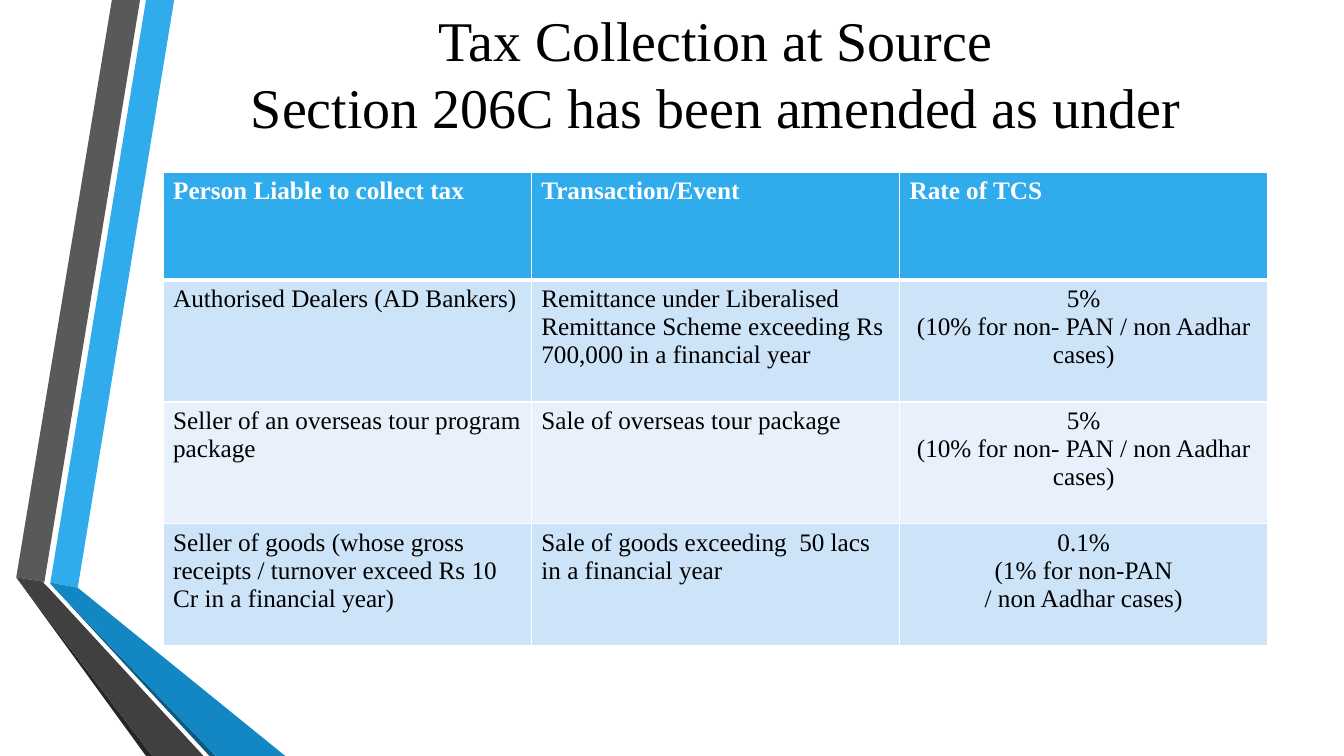
from dataclasses import dataclass

from lxml.etree import SubElement
from pptx import Presentation
from pptx.dml.color import RGBColor
from pptx.enum.text import MSO_ANCHOR, MSO_AUTO_SIZE, PP_ALIGN
from pptx.oxml.ns import qn
from pptx.util import Cm, Pt


@dataclass(frozen=True)
class Theme:
    font: str = "Times New Roman"
    title_size: int = 40
    table_size: int = 18
    black: str = "000000"
    white: str = "FFFFFF"
    blue: str = "30ACEC"
    mid_blue: str = "1287C3"
    deep_blue: str = "0C5A82"
    grey: str = "595959"
    dark_grey: str = "404040"
    near_black: str = "262626"
    bands: tuple = ("CDE3F8", "E8F1FB")


THEME = Theme()

# Ribbon outlines in centimetres, from back to front
RIBBONS = [
    (THEME.blue, [(1.27, 14.68), (1.96, 14.81), (4.39, 0), (3.68, 0)]),
    (THEME.grey, [(3.53, 0), (2.82, 0), (0.41, 14.55), (1.12, 14.66)]),
    (THEME.near_black, [(0.41, 14.55), (3.68, 19.05), (3.84, 19.05)]),
    (THEME.deep_blue, [(1.27, 14.71), (5.28, 19.05), (5.44, 19.05)]),
    (THEME.mid_blue, [(1.27, 14.71), (5.44, 19.05), (7.19, 19.05),
                      (1.96, 14.81), (1.27, 14.68)]),
    (THEME.dark_grey, [(5.13, 19.05), (1.22, 14.81), (1.09, 14.68),
                       (1.12, 14.66), (0.41, 14.55), (3.84, 19.05)]),
]

TITLE = "Tax Collection at Source\vSection 206C has been amended as under"
HEADINGS = ["Person Liable to collect tax", "Transaction/Event", "Rate of TCS"]
FIVE_PERCENT = "5%\n(10% for non- PAN / non Aadhar cases)"
RULES = [
    ["Authorised Dealers (AD Bankers)",
     "Remittance under Liberalised Remittance Scheme exceeding Rs 700,000 "
     "in a financial year",
     FIVE_PERCENT],
    ["Seller of an overseas tour program package",
     "Sale of overseas tour package",
     FIVE_PERCENT],
    ["Seller of goods (whose gross receipts / turnover exceed Rs 10 Cr "
     "in a financial year)",
     "Sale of goods exceeding  50 lacs in a financial year",
     "0.1%\n(1% for non-PAN\n/ non Aadhar cases)"],
]


def write_text(text_frame, text, *, size, color=THEME.black, bold=False,
               align=PP_ALIGN.LEFT):
    text_frame.text = text
    for paragraph in text_frame.paragraphs:
        paragraph.alignment = align
        for run in paragraph.runs:
            run.font.name = THEME.font
            run.font.size = Pt(size)
            run.font.bold = bold
            run.font.color.rgb = RGBColor.from_string(color)


def add_ribbon(slide, color, points):
    outline = [(Cm(x), Cm(y)) for x, y in points]
    builder = slide.shapes.build_freeform(*outline[0])
    builder.add_line_segments(outline[1:], close=True)
    shape = builder.convert_to_shape()
    shape.shadow.inherit = False
    shape.fill.solid()
    shape.fill.fore_color.rgb = RGBColor.from_string(color)
    shape.line.fill.background()


def set_title(slide, text):
    title = slide.shapes.title
    title.left, title.top = Cm(4.11), Cm(0)
    title.width, title.height = Cm(27.84), Cm(3.66)
    frame = title.text_frame
    frame.word_wrap = True
    frame.auto_size = MSO_AUTO_SIZE.NONE
    frame.vertical_anchor = MSO_ANCHOR.MIDDLE
    write_text(frame, text, size=THEME.title_size, align=PP_ALIGN.CENTER)


def set_borders(cell, **widths):
    properties = cell._tc.get_or_add_tcPr()
    for side in ("L", "R", "T", "B"):
        line = SubElement(properties, qn(f"a:ln{side}"),
                          w=str(Pt(widths.get(side, 1))))
        fill = SubElement(line, qn("a:solidFill"))
        SubElement(fill, qn("a:srgbClr"), val=THEME.white)


def format_cell(cell, text, fill, borders, **text_format):
    set_borders(cell, **borders)
    cell.fill.solid()
    cell.fill.fore_color.rgb = RGBColor.from_string(fill)
    write_text(cell.text_frame, text, size=THEME.table_size, **text_format)


def add_rate_table(slide):
    rows = [HEADINGS] + RULES
    heights = [Cm(2.72)] + [Cm(3.07)] * len(RULES)
    table = slide.shapes.add_table(
        len(rows), len(HEADINGS), Cm(4.11), Cm(4.34), Cm(27.84), sum(heights)
    ).table
    for row, height in zip(table.rows, heights):
        row.height = height

    # Heading row, with a thick rule below it
    for column, heading in enumerate(HEADINGS):
        format_cell(table.cell(0, column), heading, THEME.blue, {"B": 3},
                    color=THEME.white, bold=True)

    # Banded body rows, with the rates centred
    for index, texts in enumerate(RULES):
        borders = {"T": 3} if index == 0 else {}
        for column, text in enumerate(texts):
            is_rate = column == len(HEADINGS) - 1
            format_cell(table.cell(index + 1, column), text,
                        THEME.bands[index % 2], borders,
                        align=PP_ALIGN.CENTER if is_rate else PP_ALIGN.LEFT)


def main():
    presentation = Presentation()
    presentation.slide_width, presentation.slide_height = Cm(33.87), Cm(19.05)
    slide = presentation.slides.add_slide(presentation.slide_layouts[5])

    # Decoration on the left edge
    for color, points in RIBBONS:
        add_ribbon(slide, color, points)

    # Title and table
    set_title(slide, TITLE)
    add_rate_table(slide)
    presentation.save("out.pptx")


if __name__ == "__main__":
    main()
